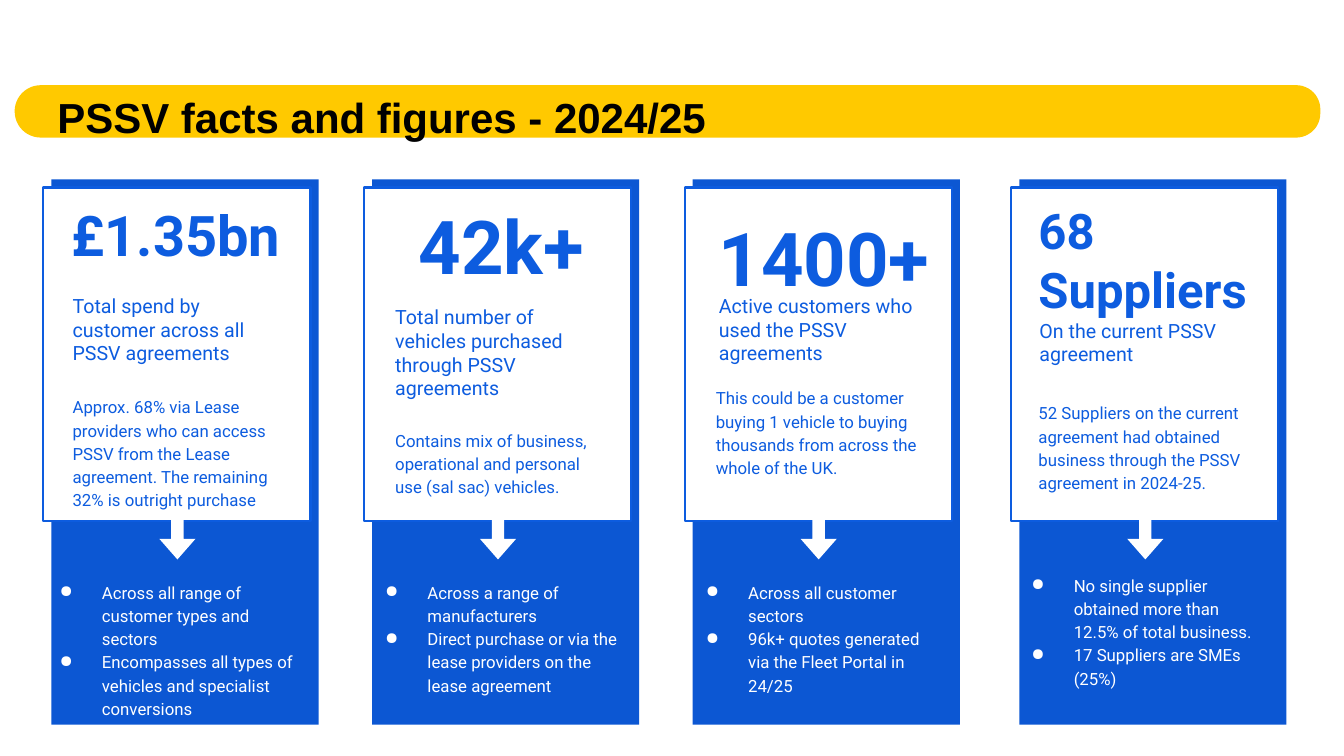
from lxml import etree
from pptx import Presentation
from pptx.dml.color import RGBColor
from pptx.enum.shapes import MSO_SHAPE
from pptx.enum.text import MSO_ANCHOR, PP_ALIGN
from pptx.oxml.ns import qn
from pptx.util import Inches, Pt

RECT = MSO_SHAPE.RECTANGLE
ARROW = MSO_SHAPE.DOWN_ARROW
BAR = MSO_SHAPE.ROUND_2_SAME_RECTANGLE
LEFT, CENTER = PP_ALIGN.LEFT, PP_ALIGN.CENTER
TOP = MSO_ANCHOR.TOP

COLORS = {
    "bar": "FFC900",
    "title": "000000",
    "panel": "0C57D3",
    "ink": "0D5CDF",
    "white": "FFFFFF",
}
INSET = Inches(0.13)
HANG = 0.42


def add_block(parent, kind, box, fill, line=None):
    shape = parent.shapes.add_shape(kind, *map(Inches, box))
    shape.shadow.inherit = False
    shape.fill.solid()
    shape.fill.fore_color.rgb = RGBColor.from_string(COLORS[fill])
    if line:
        shape.line.color.rgb = RGBColor.from_string(COLORS[line])
        shape.line.width = Pt(1.5)
    else:
        shape.line.fill.background()
    return shape


def add_text(parent, box, lines, size, color="ink", font="Roboto",
             bold=False, align=LEFT, space=1.0, indent=None):
    """Add a text box; an indent, in inches, turns its lines into bullets."""
    frame = parent.shapes.add_textbox(*map(Inches, box)).text_frame
    margins = dict.fromkeys(("left", "top", "right", "bottom"), INSET)
    for side, value in margins.items():
        setattr(frame, f"margin_{side}", value)
    frame.word_wrap = True
    frame.vertical_anchor = TOP
    look = {"name": font, "size": Pt(size), "bold": bold}
    for i, line in enumerate(lines):
        para = frame.add_paragraph() if i else frame.paragraphs[0]
        para.alignment = align
        para.line_spacing = space
        run = para.add_run()
        run.text = line
        for key, value in look.items():
            setattr(run.font, key, value)
        run.font.color.rgb = RGBColor.from_string(COLORS[color])
        if indent:
            props = para._p.get_or_add_pPr()
            props.set("marL", str(Inches(indent)))
            props.set("indent", str(-Inches(HANG)))
            tint = etree.SubElement(props, qn("a:buClr"))
            etree.SubElement(tint, qn("a:srgbClr"), val=COLORS[color])
            etree.SubElement(props, qn("a:buChar"), char="●")


# x is the left edge of the blue panel; each text has its own (left, top)
CARDS = [
    {
        "x": 0.51,
        "figure": ("£1.35bn", 40, LEFT, (0.58, 1.86)),
        "label": ("Total spend by customer across all PSSV agreements",
                  (0.59, 2.79)),
        "detail": ("Approx. 68% via Lease providers who can access PSSV from "
                   "the Lease agreement. The remaining 32% is outright "
                   "purchase", (0.59, 3.78)),
        "points": (["Across all range of customer types and sectors",
                    "Encompasses all types of vehicles and specialist "
                    "conversions"], 0.44, (0.44, 5.62)),
    },
    {
        "x": 3.69,
        "figure": ("42k+", 53, CENTER, (3.79, 1.86)),
        "label": ("Total number of vehicles purchased through PSSV "
                  "agreements", (3.79, 2.9)),
        "detail": ("Contains mix of business, operational and personal use "
                   "(sal sac) vehicles.", (3.79, 4.11)),
        "points": (["Across a range of manufacturers",
                    "Direct purchase or via the lease providers on the lease "
                    "agreement"], 0.5, (3.61, 5.62)),
    },
    {
        "x": 6.87,
        "figure": ("1400+", 53, LEFT, (7, 1.98)),
        "label": ("Active customers who used the PSSV agreements",
                  (7, 2.79)),
        "detail": ("This could be a customer buying 1 vehicle to buying "
                   "thousands from across the whole of the UK.",
                   (6.97, 3.69)),
        "points": (["Across all customer sectors",
                    "96k+ quotes generated via the Fleet Portal in 24/25"],
                   0.5, (6.79, 5.62)),
    },
    {
        "x": 10.11,
        "figure": ("68 Suppliers", 35, LEFT, (10.17, 1.86)),
        "label": ("On the current PSSV agreement", (10.18, 3.03)),
        "detail": ("52 Suppliers on the current agreement had obtained "
                   "business through the PSSV agreement in 2024-25.",
                   (10.17, 3.84)),
        "points": (["No single supplier obtained more than 12.5% of total "
                    "business.", "17 Suppliers are SMEs (25%)"],
                   0.56, (9.96, 5.55)),
    },
]

deck = Presentation()
deck.slide_width, deck.slide_height = Inches(13.33), Inches(7.5)
slide = deck.slides.add_slide(deck.slide_layouts[6])

bar = add_block(slide, BAR, (6.36, -5.37, 0.52, 12.95), "bar")
bar.rotation = 90
bar.adjustments[0], bar.adjustments[1] = 0.46, 0.5
add_text(slide, (0.44, 0.78, 10.48, 0.48),
         ["PSSV facts and figures - 2024/25"], 30, "title", "Arial", True)

for card in CARDS:
    group = slide.shapes.add_group_shape()
    x = card["x"]
    add_block(group, RECT, (x, 1.78, 2.65, 5.41), "panel")
    add_block(group, RECT, (x - 0.08, 1.86, 2.65, 3.31), "white", "ink")

    label, spot = card["label"]
    add_text(group, (*spot, 2.37, 1.17), [label], 14)
    detail, spot = card["detail"]
    add_text(group, (*spot, 2.37, 1.1), [detail], 12, space=1.15)
    figure, size, align, spot = card["figure"]
    add_text(group, (*spot, 2.37, 0.9), [figure], size, bold=True,
             align=align)

    arrow = add_block(group, ARROW, (x + 1.07, 5.03, 0.36, 0.52), "white")
    arrow.adjustments[0], arrow.adjustments[1] = 0.34, 0.57
    points, indent, spot = card["points"]
    add_text(group, (*spot, 2.65, 1.44), points, 12, "white", space=1.15,
             indent=indent)

deck.save("out.pptx")
